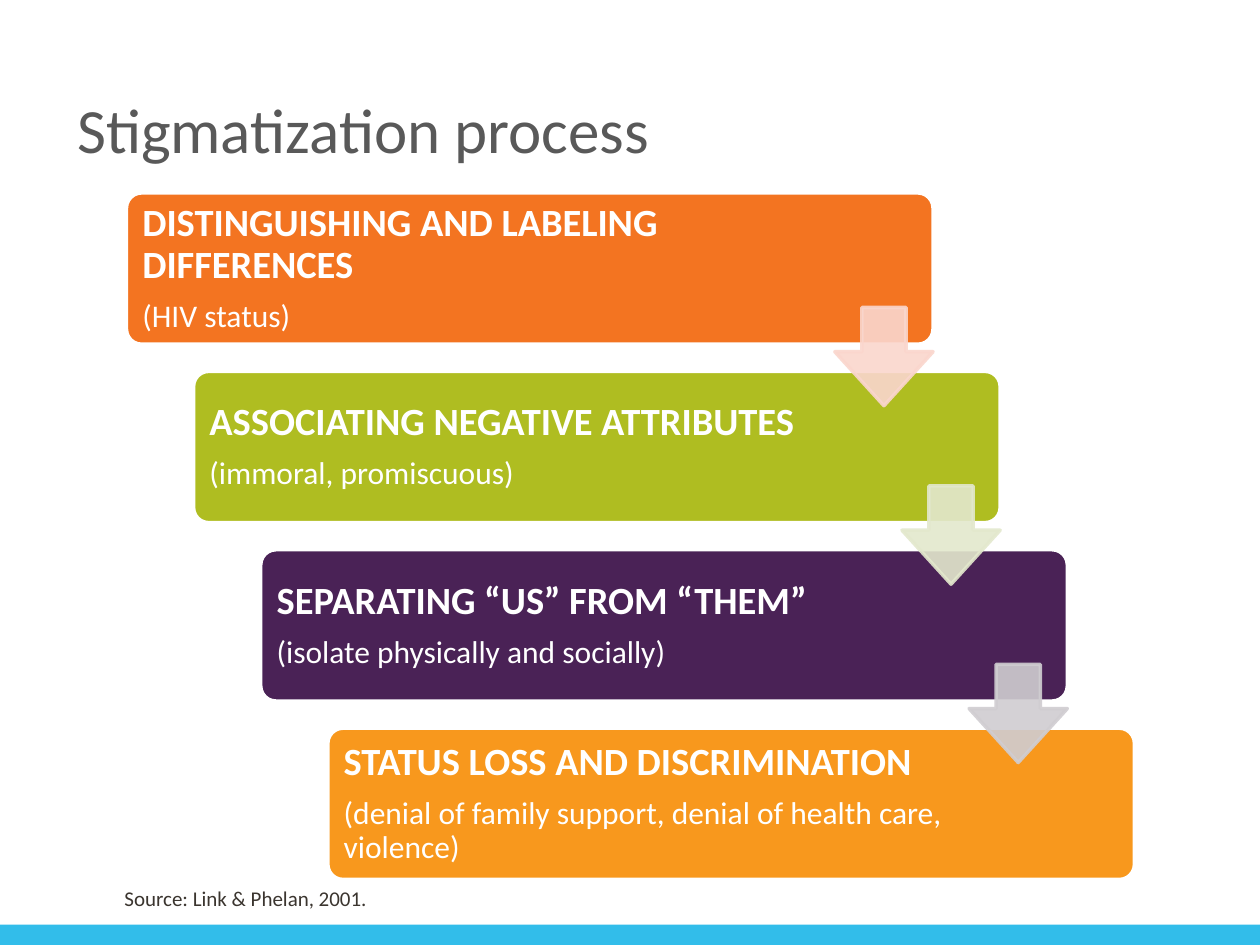
from lxml import etree
from pptx import Presentation
from pptx.dml.color import RGBColor
from pptx.enum.shapes import MSO_SHAPE
from pptx.enum.text import MSO_ANCHOR, PP_ALIGN
from pptx.oxml.ns import qn
from pptx.util import Cm, Pt

RECT, ROUNDED, ARROW = MSO_SHAPE.RECTANGLE, MSO_SHAPE.ROUNDED_RECTANGLE, MSO_SHAPE.DOWN_ARROW
MIDDLE, TOP = MSO_ANCHOR.MIDDLE, MSO_ANCHOR.TOP
LEFT = PP_ALIGN.LEFT
TITLE_ONLY = 5

COLORS = {"white": "FFFFFF", "title": "595959", "source": "3B352F", "bar": "32BDEA"}
TITLE = {"size": Pt(36), "bold": False}
HEADING = {"size": Pt(22), "bold": True}
DETAIL = {"size": Pt(18), "bold": False}
SOURCE = {"size": Pt(12), "bold": False}

# heading, detail, box colour, colour of the arrow to the next step
STEPS = [
    ("DISTINGUISHING AND LABELING DIFFERENCES", "(HIV status)", "F37421", "FAD6CD"),
    ("ASSOCIATING NEGATIVE ATTRIBUTES", "(immoral, promiscuous)", "AFBD21", "E3E8CD"),
    ("SEPARATING “US” FROM “THEM”", "(isolate physically and socially)", "4A2256", "D0CDD1"),
    ("STATUS LOSS AND DISCRIMINATION",
     "(denial of family support, denial of health care, violence)", "F8981D", None),
]


def write(p, text, color, fmt):
    p.alignment = LEFT
    r = p.add_run()
    r.text = text
    r.font.name = "Calibri"
    r.font.color.rgb = RGBColor.from_string(color)
    for name, value in fmt.items():
        setattr(r.font, name, value)


def add_block(slide, kind, box, fill, line=None, adjustments=(), alpha=None):
    sp = slide.shapes.add_shape(kind, *map(Cm, box))
    sp.shadow.inherit = False
    for i, value in enumerate(adjustments):
        sp.adjustments[i] = value
    sp.fill.solid()
    sp.fill.fore_color.rgb = RGBColor.from_string(fill)
    if line:
        sp.line.color.rgb = RGBColor.from_string(line)
        sp.line.width = Pt(2)
    else:
        sp.line.fill.background()
    if alpha:
        for color in sp._element.spPr.iter(qn("a:srgbClr")):
            etree.SubElement(color, qn("a:alpha"), val=str(alpha * 1000))


def add_text(slide, box, anchor, inset=None):
    tf = slide.shapes.add_textbox(*map(Cm, box)).text_frame
    tf.word_wrap = True
    tf.vertical_anchor = anchor
    if inset:
        for side in ("left", "top", "right", "bottom"):
            setattr(tf, f"margin_{side}", Cm(inset))
    return tf


def add_title(slide, box, text):
    sp = slide.shapes.title
    sp.left, sp.top, sp.width, sp.height = map(Cm, box)
    tf = sp.text_frame
    tf.vertical_anchor = MIDDLE
    write(tf.paragraphs[0], text, COLORS["title"], TITLE)


def add_step(slide, box, heading, detail, fill):
    x, y, w, h = box
    add_block(slide, ROUNDED, box, fill, COLORS["white"], [0.1])
    tf = add_text(slide, (x + 0.09, y + 0.09, 12.72, h - 0.18), MIDDLE, 0.23)
    p = tf.paragraphs[0]
    p.space_after = Pt(7.7)
    write(p, heading, COLORS["white"], HEADING)
    write(tf.add_paragraph(), detail, COLORS["white"], DETAIL)
    for p in tf.paragraphs:
        p.line_spacing = 0.9


def add_staircase(slide, box):
    x, y, w, h = box
    step_w, step_h, arrow = 16.26, 3.05, 1.98
    dx = (w - step_w) / (len(STEPS) - 1)
    dy = (h - step_h) / (len(STEPS) - 1)
    corners = [(x + i * dx, y + i * dy) for i in range(len(STEPS))]
    for (left, top), (heading, detail, fill, _) in zip(corners, STEPS):
        add_step(slide, (left, top, step_w, step_h), heading, detail, fill)
    # Arrows lie over the boxes, flush with each right edge
    for (left, top), (*_, color) in zip(corners, STEPS):
        if color:
            add_block(slide, ARROW, (left + step_w - arrow, top + 2.31, arrow, arrow),
                      color, color, [0.45, 0.55], alpha=90)


def add_source(slide, box, text):
    tf = add_text(slide, box, TOP)
    write(tf.paragraphs[0], text, COLORS["source"], SOURCE)


def main():
    prs = Presentation()
    prs.slide_width, prs.slide_height = Cm(25.4), Cm(19.05)
    slide = prs.slides.add_slide(prs.slide_layouts[TITLE_ONLY])
    # Footer bar
    add_block(slide, RECT, (0, 18.64, 25.4, 0.51), COLORS["bar"])
    # Title, process and source
    add_title(slide, (1.3, 1.24, 22.83, 2.69), "Stigmatization process")
    add_staircase(slide, (2.55, 3.89, 20.32, 13.84))
    add_source(slide, (2.26, 17.73, 13.44, 0.76), "Source: Link & Phelan, 2001.")
    prs.save("out.pptx")


if __name__ == "__main__":
    main()
